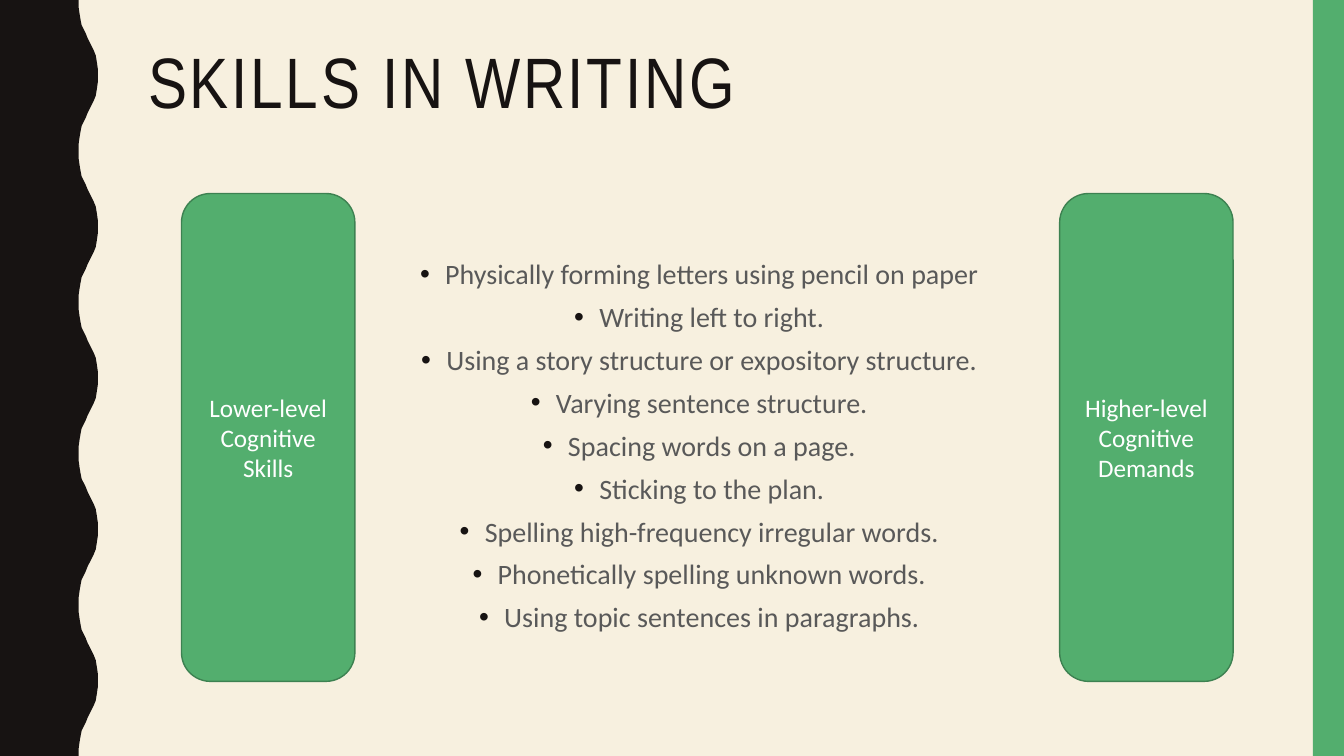
from lxml.etree import SubElement
from pptx import Presentation
from pptx.dml.color import RGBColor
from pptx.enum.shapes import MSO_SHAPE as SHAPE
from pptx.enum.text import MSO_ANCHOR as ANCHOR, PP_ALIGN as ALIGN
from pptx.oxml.ns import qn
from pptx.util import Pt

PX = 9144  # EMU in one px, 100 px to the inch
WIDTH, HEIGHT = 1333, 750
COLORS = {
    "cream": "F7F0DF",
    "ink": "171312",
    "green": "53AE6E",
    "edge": "3D8151",
    "grey": "595959",
    "white": "FFFFFF",
}
WAVE = 150
# Trough to crest of one wave, as (x, y); the way back mirrors it.
HALF_WAVE = [(78, 0), (78, 7), (79, 14), (80, 20), (81, 25), (83, 29), (85, 33), (87, 38),
             (89, 42), (91, 46), (93, 50), (95, 55), (96, 61), (97, 68), (97, 75)]
SKILLS = [
    "Physically forming letters using pencil on paper",
    "Writing left to right.",
    "Using a story structure or expository structure.",
    "Varying sentence structure.",
    "Spacing words on a page.",
    "Sticking to the plan.",
    "Spelling high-frequency irregular words.",
    "Phonetically spelling unknown words.",
    "Using topic sentences in paragraphs.",
]
LEVELS = [(180, "Lower-level Cognitive Skills"), (1051, "Higher-level Cognitive Demands")]


def rgb(name):
    return RGBColor.from_string(COLORS[name])


def add_bullet(p, indent=25):
    pPr = p._p.get_or_add_pPr()
    pPr.set("marL", str(indent * PX))
    pPr.set("indent", str(-indent * PX))
    color = SubElement(pPr, qn("a:buClr"))
    SubElement(color, qn("a:srgbClr"), val=COLORS["ink"])
    SubElement(pPr, qn("a:buFont"), typeface="Arial")
    SubElement(pPr, qn("a:buChar"), char="•")


def write(tf, lines, size=18, color="white", font="Calibri", align=ALIGN.CENTER,
          anchor=ANCHOR.TOP, before=0, leading=None, tracking=0, bullet=False):
    """Fill a text frame with one paragraph per line."""
    tf.word_wrap = True
    tf.vertical_anchor = anchor
    for i, line in enumerate(lines):
        p = tf.add_paragraph() if i else tf.paragraphs[0]
        p.alignment = align
        if leading:
            p.line_spacing = leading
        if i and before:
            p.space_before = Pt(before)
        if bullet:
            add_bullet(p)
        r = p.add_run()
        r.text = line
        r.font.size, r.font.name = Pt(size), font
        r.font.color.rgb = rgb(color)
        if tracking:
            r._r.get_or_add_rPr().set("spc", str(tracking * 100))


class Page:
    def __init__(self, prs):
        self.slide = prs.slides.add_slide(prs.slide_layouts[6])
        self.shapes = self.slide.shapes
        fill = self.slide.background.fill
        fill.solid()
        fill.fore_color.rgb = rgb("cream")

    def paint(self, sp, fill, line=None):
        sp.shadow.inherit = False
        sp.fill.solid()
        sp.fill.fore_color.rgb = rgb(fill)
        if line:
            sp.line.color.rgb = rgb(line)
            sp.line.width = Pt(1)
        else:
            sp.line.fill.background()
        return sp

    def shape(self, kind, box, fill, line=None):
        sp = self.shapes.add_shape(kind, *(v * PX for v in box))
        return self.paint(sp, fill, line)

    def outline(self, points, fill):
        builder = self.shapes.build_freeform(*points[0], scale=PX)
        builder.add_line_segments(points[1:], close=True)
        return self.paint(builder.convert_to_shape(), fill)

    def text(self, box, lines, **style):
        sp = self.shapes.add_textbox(*(v * PX for v in box))
        write(sp.text_frame, lines, **style)


def wavy_edge():
    wave = HALF_WAVE + [(x, WAVE - y) for x, y in HALF_WAVE[-2:0:-1]]
    edge = [(x, top + y) for top in range(0, HEIGHT, WAVE) for x, y in wave]
    return [(0, 0), *edge, (HALF_WAVE[0][0], HEIGHT), (0, HEIGHT)]


def main():
    prs = Presentation()
    prs.slide_width, prs.slide_height = WIDTH * PX, HEIGHT * PX
    page = Page(prs)
    page.outline(wavy_edge(), "ink")
    page.shape(SHAPE.RECTANGLE, (1302, 0, 31, HEIGHT), "green")
    page.text((137, 42, 1113, 163), ["SKILLS IN WRITING"], size=51, color="ink",
              font="Arial Narrow", align=ALIGN.LEFT, leading=0.9, tracking=2)
    page.text((137, 250, 1113, 393), SKILLS, size=20, color="grey", before=6.6, bullet=True)
    for left, label in LEVELS:
        sp = page.shape(SHAPE.ROUNDED_RECTANGLE, (left, 192, 172, 484), "green", "edge")
        write(sp.text_frame, [label], anchor=ANCHOR.MIDDLE)
    prs.save("out.pptx")


if __name__ == "__main__":
    main()
